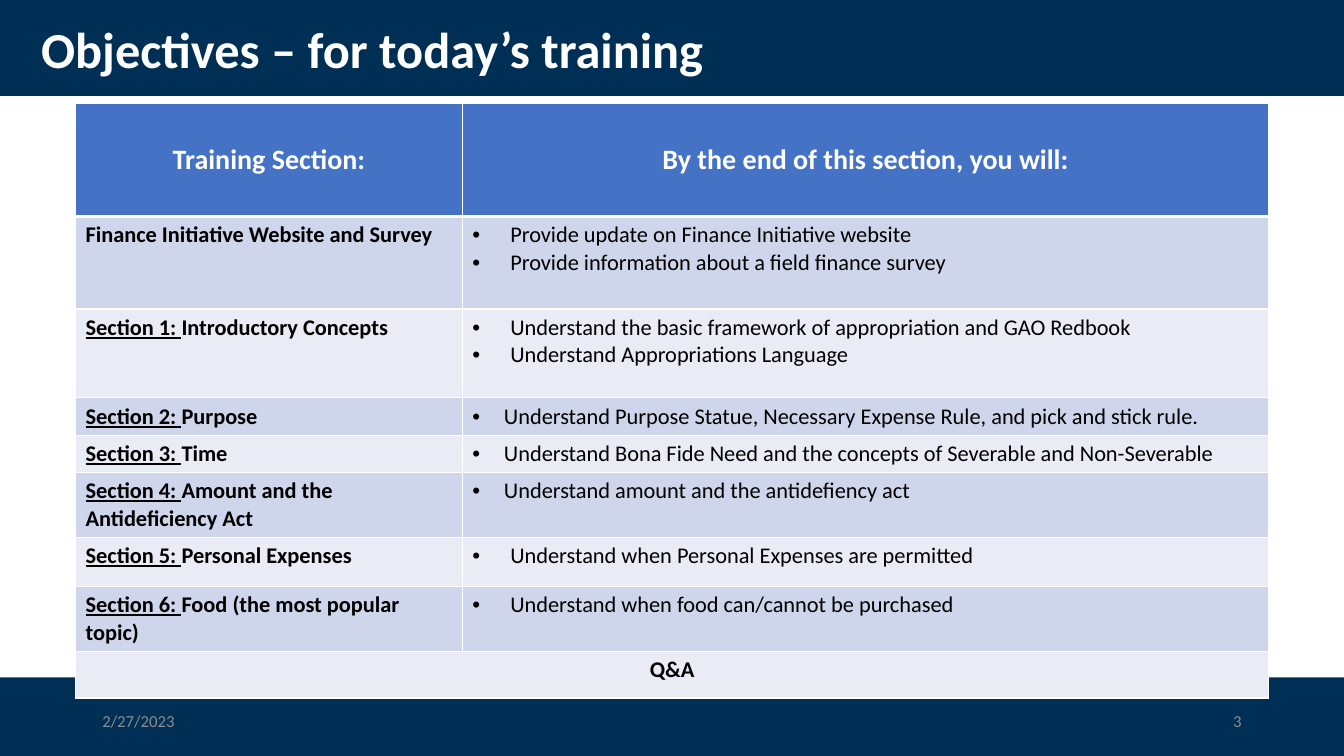
from dataclasses import dataclass

from lxml import etree
from pptx import Presentation
from pptx import util as u
from pptx.dml.color import RGBColor
from pptx.enum import shapes, text
from pptx.oxml import ns


@dataclass(frozen=True)
class Theme:
    font: str = "Calibri"
    navy: str = "002F56"
    blue: str = "4472C4"
    bands: tuple = ("CFD5EA", "E9EBF5")
    white: str = "FFFFFF"
    black: str = "000000"
    grey: str = "8C8C8C"
    title: int = 36
    header: int = 20
    body: int = 16
    footer: int = 12


THEME = Theme()
LEFT, CENTER, RIGHT = text.PP_ALIGN.LEFT, text.PP_ALIGN.CENTER, text.PP_ALIGN.RIGHT


def write(paragraph, content, size=THEME.body, color=THEME.black, bold=False,
          underline=False, align=LEFT):
    """Add one formatted run to a paragraph."""
    paragraph.alignment = align
    run = paragraph.add_run()
    run.text = content
    font = run.font
    font.name, font.size = THEME.font, u.Pt(size)
    font.bold, font.underline = bold, underline
    font.color.rgb = RGBColor.from_string(color)


def add_bullet(paragraph, indent):
    properties = paragraph._p.get_or_add_pPr()
    properties.set("marL", str(u.Pt(indent)))
    properties.set("indent", str(-u.Pt(indent)))
    etree.SubElement(properties, ns.qn("a:buFont"), typeface="Arial")
    etree.SubElement(properties, ns.qn("a:buChar"), char="•")


def set_borders(cell, color, bottom=1):
    properties = cell._tc.get_or_add_tcPr()
    widths = {"L": 1, "R": 1, "T": 1, "B": bottom}
    for index, (side, width) in enumerate(widths.items()):
        line = etree.Element(ns.qn(f"a:ln{side}"), w=str(u.Pt(width)))
        fill = etree.SubElement(line, ns.qn("a:solidFill"))
        etree.SubElement(fill, ns.qn("a:srgbClr"), val=color)
        properties.insert(index, line)


class SlideBuilder:
    def __init__(self, slide, theme):
        self.slide, self.theme = slide, theme

    def bar(self, left, top, width, height):
        shape = self.slide.shapes.add_shape(
            shapes.MSO_SHAPE.RECTANGLE, *map(u.Pt, (left, top, width, height)))
        shape.shadow.inherit = False
        shape.fill.solid()
        shape.fill.fore_color.rgb = RGBColor.from_string(self.theme.navy)
        shape.line.fill.background()

    def label(self, content, left, top, width, height, spacing=1.0, **style):
        box = self.slide.shapes.add_textbox(*map(u.Pt, (left, top, width, height)))
        frame = box.text_frame
        frame.word_wrap = True
        frame.vertical_anchor = text.MSO_ANCHOR.MIDDLE
        paragraph = frame.paragraphs[0]
        paragraph.line_spacing = spacing
        write(paragraph, content, **style)

    def table(self, left, top, widths, heights):
        frame = self.slide.shapes.add_table(
            len(heights), len(widths),
            *map(u.Pt, (left, top, sum(widths), sum(heights))))
        table = frame.table
        table.horz_banding = False
        for column, width in zip(table.columns, widths):
            column.width = u.Pt(width)
        for row, height in zip(table.rows, heights):
            row.height = u.Pt(height)
        return table

    def cell(self, cell, fill, bottom=1):
        cell.fill.solid()
        cell.fill.fore_color.rgb = RGBColor.from_string(fill)
        set_borders(cell, self.theme.white, bottom)
        return cell.text_frame.paragraphs[0]


HEADERS = ("Training Section:", "By the end of this section, you will:")
WIDE, NARROW = 27, 22.5  # bullet indents
# Section number, topic, bullet indent, goals, row height
SECTIONS = [
    ("", "Finance Initiative Website and Survey", WIDE,
     ["Provide update on Finance Initiative website",
      "Provide information about a field finance survey"], 66),
    ("Section 1: ", "Introductory Concepts", WIDE,
     ["Understand the basic framework of appropriation and GAO Redbook",
      "Understand Appropriations Language"], 63.5),
    ("Section 2: ", "Purpose", NARROW,
     ["Understand Purpose Statue, Necessary Expense Rule, and pick and stick rule."], 26.7),
    ("Section 3: ", "Time", NARROW,
     ["Understand Bona Fide Need and the concepts of Severable and Non-Severable"], 26.7),
    ("Section 4: ", "Amount and the Antideficiency Act", NARROW,
     ["Understand amount and the antidefiency act"], 46.3),
    ("Section 5: ", "Personal Expenses", WIDE,
     ["Understand when Personal Expenses are permitted"], 35),
    ("Section 6: ", "Food (the most popular topic)", WIDE,
     ["Understand when food can/cannot be purchased"], 46.3),
]


def fill_objectives(builder, table):
    theme = builder.theme
    # Header row
    for column, heading in enumerate(HEADERS):
        cell = table.cell(0, column)
        cell.vertical_anchor = text.MSO_ANCHOR.MIDDLE
        write(builder.cell(cell, theme.blue, bottom=3), heading, size=theme.header,
              color=theme.white, bold=True, align=CENTER)

    # Training sections
    for row, (number, topic, indent, goals, _) in enumerate(SECTIONS, 1):
        band = theme.bands[(row - 1) % 2]
        paragraph = builder.cell(table.cell(row, 0), band)
        if number:
            write(paragraph, number, bold=True, underline=True)
        write(paragraph, topic, bold=True)

        goal_cell = table.cell(row, 1)
        paragraph = builder.cell(goal_cell, band)
        for index, goal in enumerate(goals):
            if index:
                paragraph = goal_cell.text_frame.add_paragraph()
            add_bullet(paragraph, indent)
            write(paragraph, goal)

    # Closing row across both columns
    last = len(SECTIONS) + 1
    table.cell(last, 0).merge(table.cell(last, 1))
    band = theme.bands[(last - 1) % 2]
    builder.cell(table.cell(last, 1), band)
    write(builder.cell(table.cell(last, 0), band), "Q&A", bold=True, align=CENTER)


def main():
    presentation = Presentation()
    presentation.slide_width, presentation.slide_height = u.Pt(960), u.Pt(540)
    slide = presentation.slides.add_slide(presentation.slide_layouts[6])
    builder = SlideBuilder(slide, THEME)

    # Top and bottom bars, title
    builder.bar(0, 0, 960, 68.5)
    builder.bar(0, 483.8, 960, 56.2)
    builder.label("Objectives – for today’s training", 22.3, 13, 828, 49, spacing=0.9,
                  size=THEME.title, color=THEME.white, bold=True)

    # Objectives table
    heights = [80.7, *(section[-1] for section in SECTIONS), 33.5]
    fill_objectives(builder, builder.table(54, 74, (276.3, 576), heights))

    # Footer
    footer = {"size": THEME.footer, "color": THEME.grey}
    builder.label("3", 678, 500.5, 216, 28.8, align=RIGHT, **footer)
    builder.label("2/27/2023", 66, 500.5, 216, 28.8, **footer)

    presentation.save("out.pptx")


if __name__ == "__main__":
    main()
